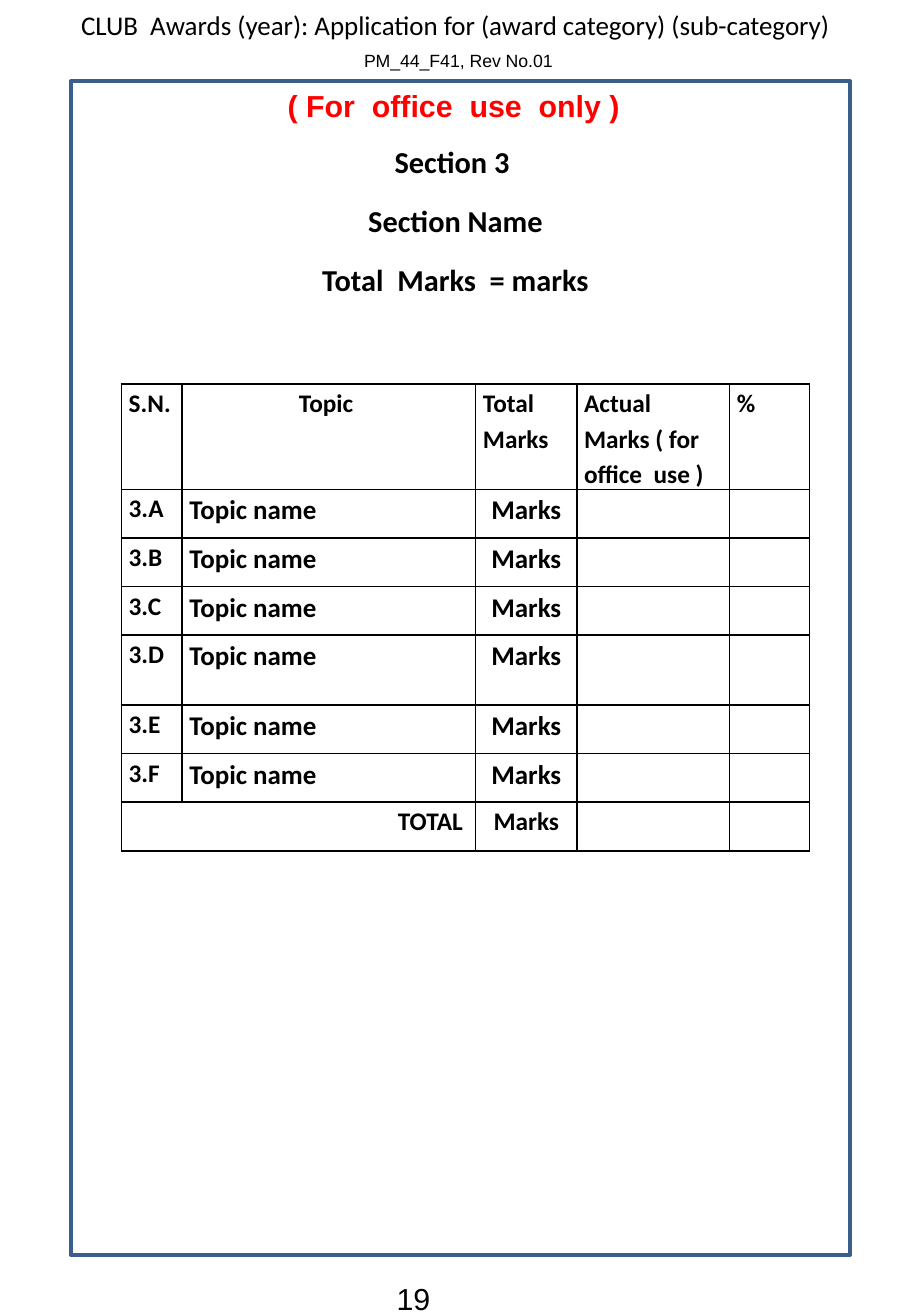
from lxml.etree import SubElement
from pptx import Presentation
from pptx.dml.color import RGBColor
from pptx.enum.shapes import MSO_SHAPE as Shape
from pptx.enum.text import MSO_ANCHOR as Anchor, PP_ALIGN as Align
from pptx.oxml.ns import qn
from pptx.util import Pt


def color(hex_string):
    return RGBColor.from_string(hex_string)


def style(paragraph, size, name, bold=False, align=Align.LEFT, hex_string="000000"):
    paragraph.alignment = align
    paragraph.font.size = Pt(size)
    paragraph.font.name = name
    paragraph.font.bold = bold
    paragraph.font.color.rgb = color(hex_string)


presentation = Presentation()
presentation.slide_width = Pt(540)
presentation.slide_height = Pt(780)
slide = presentation.slides.add_slide(presentation.slide_layouts[5])

title = slide.shapes.title
title.left, title.top, title.width, title.height = Pt(78), Pt(78), Pt(384), Pt(103)
title.text_frame.text = "Section 3 \nSection Name\nTotal  Marks  = marks"
title.text_frame.vertical_anchor = Anchor.TOP
for paragraph in title.text_frame.paragraphs:
    style(paragraph, 18, "Calibri", True, Align.CENTER)
    paragraph.line_spacing = 1.15
    paragraph.space_after = Pt(10)

number_box = slide.shapes.add_textbox(Pt(228), Pt(755.5), Pt(102), Pt(29))
number_box.text_frame.text = "19"
style(number_box.text_frame.paragraphs[0], 18, "Arial")

header_box = slide.shapes.add_textbox(Pt(0), Pt(1.5), Pt(540), Pt(46))
header_box.text_frame.word_wrap = True
header_box.text_frame.text = "CLUB  Awards (year): Application for (award category) (sub-category)\n "
for paragraph in header_box.text_frame.paragraphs:
    style(paragraph, 16, "Calibri", align=Align.CENTER)
form_number = header_box.text_frame.paragraphs[1].add_run()
form_number.text = "PM_44_F41, Rev No.01"
form_number.font.size = Pt(10.5)
form_number.font.name = "Arial"

column_widths = [36, 174, 60, 90.5, 47.5]
row_heights = [62.5, 28.8, 28.8, 28.8, 41.5, 28.8, 28.8, 28.8]
rows = [["S.N.", "Topic ", "Total Marks", "Actual Marks ( for office  use )", "%"]]
rows += [[f"3.{letter}", "Topic name", "Marks", "", ""] for letter in "ABCDEF"]
rows += [["TOTAL ", "", "Marks", "", ""]]

table = slide.shapes.add_table(
    len(rows), len(column_widths), Pt(72), Pt(227.5), Pt(sum(column_widths)), Pt(sum(row_heights))
).table
for column, width in zip(table.columns, column_widths):
    column.width = Pt(width)
for row, height in zip(table.rows, row_heights):
    row.height = Pt(height)

last = len(rows) - 1
table.cell(last, 0).merge(table.cell(last, 1))
centered = {(0, 1)} | {(row_index, 2) for row_index in range(1, len(rows))}

for row_index, texts in enumerate(rows):
    for column_index, text in enumerate(texts):
        cell = table.cell(row_index, column_index)
        cell.margin_left = cell.margin_right = Pt(4.3)
        cell.margin_top = cell.margin_bottom = Pt(0)
        properties = cell._tc.get_or_add_tcPr()
        for side in ("a:lnL", "a:lnR", "a:lnT", "a:lnB"):
            border = SubElement(properties, qn(side), w=str(Pt(1)))
            fill = SubElement(border, qn("a:solidFill"))
            SubElement(fill, qn("a:srgbClr"), val="000000")
        cell.fill.background()
        cell.text = text
        paragraph = cell.text_frame.paragraphs[0]
        align = Align.CENTER if (row_index, column_index) in centered else Align.LEFT
        if text == "TOTAL ":
            align = Align.RIGHT
        size = 16 if 0 < row_index < last and column_index in (1, 2) else 15
        style(paragraph, size, "Calibri", True, align)
        paragraph.line_spacing = 1.15
        paragraph.space_after = Pt(10)

office_box = slide.shapes.add_textbox(Pt(162), Pt(48), Pt(214), Pt(29))
office_box.text_frame.word_wrap = False
office_box.text_frame.text = "( For  office  use  only )"
style(office_box.text_frame.paragraphs[0], 18, "Arial", True, Align.CENTER, "FF0000")

frame = slide.shapes.add_shape(Shape.RECTANGLE, Pt(42), Pt(48), Pt(462), Pt(696))
frame.shadow.inherit = False
frame.fill.background()
frame.line.color.rgb = color("3A5F8C")
frame.line.width = Pt(2)

presentation.save("out.pptx")
